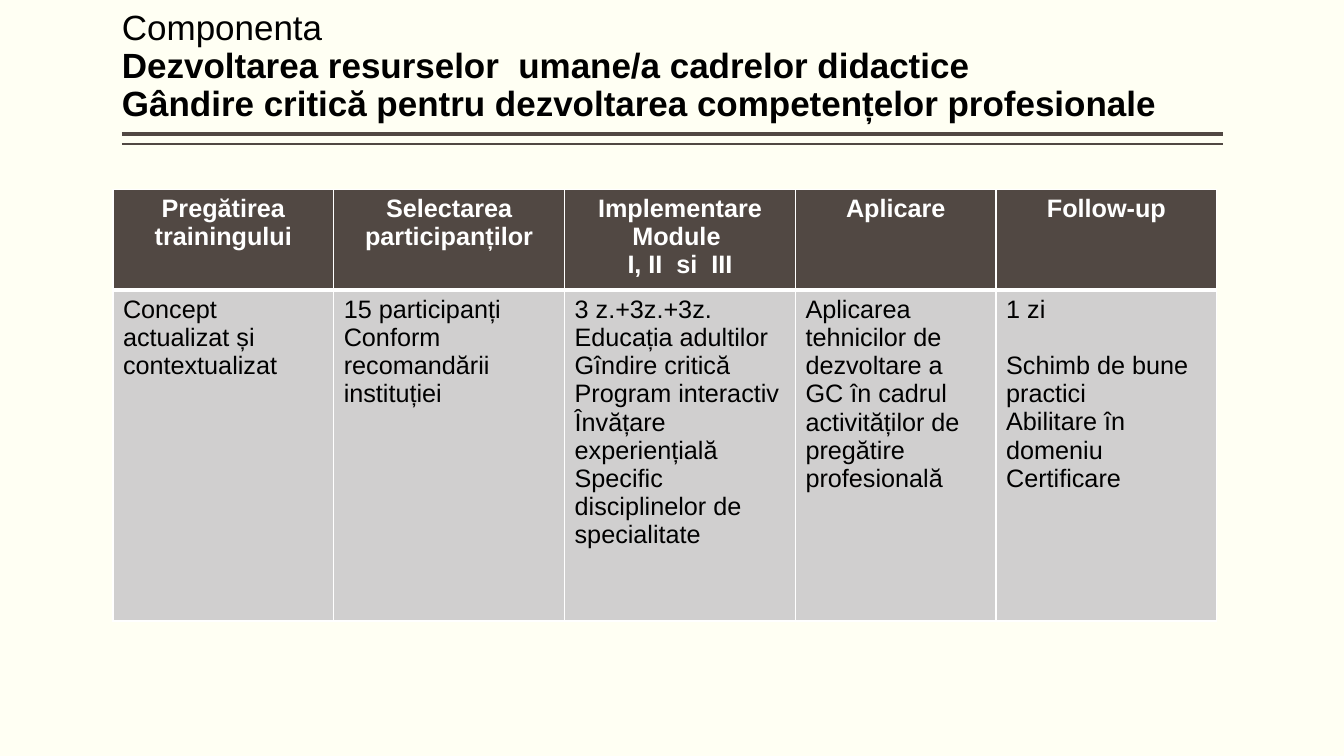
from lxml import etree
from pptx import Presentation
from pptx.dml.color import RGBColor
from pptx.enum import shapes, text
from pptx.oxml import ns
from pptx import util as u

COLORS = {"page": "FFFFF3", "dark": "514843", "body": "D0CFCF",
          "ink": "000000", "white": "FFFFFF"}

HEADS = [["Pregătirea trainingului"], ["Selectarea", "participanților"],
         ["Implementare", "Module ", "I, II  si  III"], ["Aplicare"], ["Follow-up"]]

STEPS = [
    ["Concept actualizat și contextualizat"],
    ["15 participanți", "Conform recomandării instituției"],
    ["3 z.+3z.+3z.", "Educația adultilor", "Gîndire critică", "Program interactiv",
     "Învățare experiențială", "Specific disciplinelor de specialitate"],
    ["Aplicarea tehnicilor de dezvoltare a GC în cadrul activităților "
     "de pregătire profesională"],
    ["1 zi", "Schimb de bune practici", "Abilitare în domeniu", "Certificare"],
]

TITLE = [("Componenta ", False),
         ("Dezvoltarea resurselor  umane/a cadrelor didactice", True),
         ("Gândire critică pentru dezvoltarea competențelor profesionale", True)]


class Deck:
    """Holds the style and the current slide."""

    def __init__(self, slide, font="Arial"):
        self.slide = slide
        self.font = font
        self.paint(slide.background.fill, "page")

    def paint(self, fill, color):
        fill.solid()
        fill.fore_color.rgb = RGBColor.from_string(COLORS[color])

    def run(self, para, words, size, color, bold):
        run = para.add_run()
        run.text = words
        run.font.name = self.font
        run.font.size = u.Pt(size)
        run.font.bold = bold
        run.font.color.rgb = RGBColor.from_string(COLORS[color])

    def title(self, lines, left, top, width, height):
        box = self.slide.shapes.add_textbox(
            u.Inches(left), u.Inches(top), u.Inches(width), u.Inches(height))
        frame = box.text_frame
        frame.word_wrap = True
        frame.vertical_anchor = text.MSO_ANCHOR.BOTTOM
        frame.margin_left = frame.margin_right = 0
        para = frame.paragraphs[0]
        para.line_spacing = 0.9
        for i, (words, bold) in enumerate(lines):
            if i:
                para.add_line_break()
            self.run(para, words, 25, "ink", bold)

    def rule(self, left, right, y, weight):
        line = self.slide.shapes.add_connector(
            shapes.MSO_CONNECTOR.STRAIGHT,
            u.Inches(left), u.Inches(y), u.Inches(right), u.Inches(y))
        line.line.width = u.Pt(weight)
        line.line.color.rgb = RGBColor.from_string(COLORS["dark"])
        etree.SubElement(line._element.spPr, ns.qn("a:effectLst"))

    def edges(self, cell, weights):
        props = cell._tc.get_or_add_tcPr()
        for i, (side, weight) in enumerate(zip("LRTB", weights)):
            edge = etree.Element(ns.qn("a:ln" + side), w=str(u.Pt(weight)))
            fill = etree.SubElement(edge, ns.qn("a:solidFill"))
            etree.SubElement(fill, ns.qn("a:srgbClr"), val=COLORS["white"])
            props.insert(i, edge)

    def cell(self, cell, lines, head):
        self.paint(cell.fill, "dark" if head else "body")
        self.edges(cell, (1, 1, 1, 3) if head else (1, 1, 3, 1))
        frame = cell.text_frame
        for i, words in enumerate(lines):
            para = frame.add_paragraph() if i else frame.paragraphs[0]
            para.alignment = text.PP_ALIGN.CENTER if head else text.PP_ALIGN.LEFT
            self.run(para, words, 18, "white" if head else "ink", head)

    def table(self, rows, left, top, widths, heights):
        grid = self.slide.shapes.add_table(
            len(rows), len(widths), u.Inches(left), u.Inches(top),
            u.Inches(sum(widths)), u.Inches(sum(heights))).table
        for col, width in zip(grid.columns, widths):
            col.width = u.Inches(width)
        for r, (row, height) in enumerate(zip(rows, heights)):
            grid.rows[r].height = u.Inches(height)
            for c, lines in enumerate(row):
                self.cell(grid.cell(r, c), lines, r == 0)
        return grid


def main():
    prs = Presentation()
    prs.slide_width, prs.slide_height = u.Inches(13.33), u.Inches(7.5)
    deck = Deck(prs.slides.add_slide(prs.slide_layouts[6]))
    for y, weight in ((1.33, 3), (1.43, 1)):
        deck.rule(1.21, 12.13, y, weight)
    deck.title(TITLE, 1.21, 0.08, 10.92, 1.2)
    grid = deck.table([HEADS, STEPS], 1.12, 1.88,
                      [2.19, 2.29, 2.29, 1.99, 2.19], [0.92, 3.28])
    follow = grid.cell(1, 4).text_frame
    follow.paragraphs[1].space_before = u.Pt(20)
    prs.save("out.pptx")


if __name__ == "__main__":
    main()
